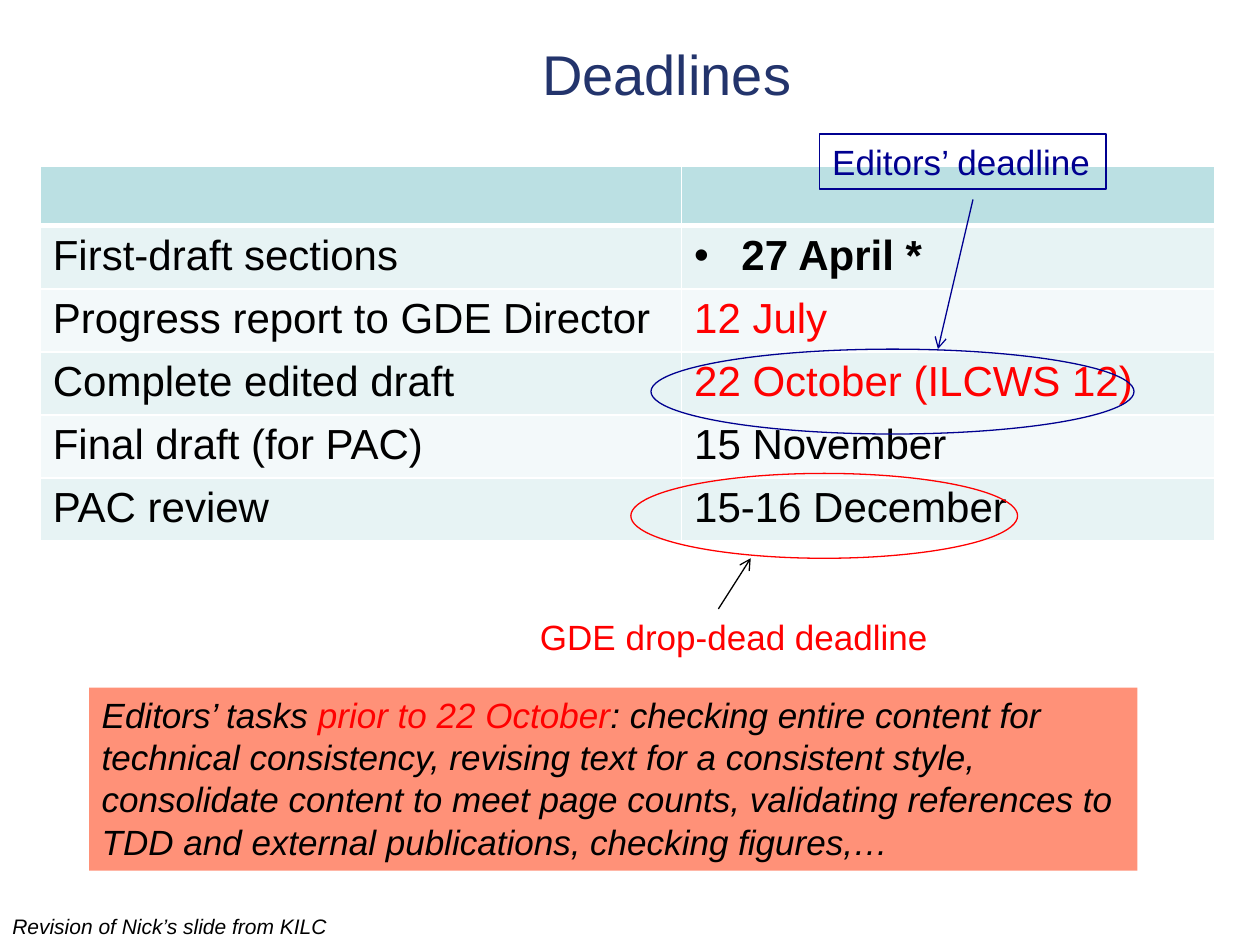
from lxml import etree
from pptx import Presentation
from pptx.dml.color import RGBColor
from pptx.enum import shapes as kinds, text as txt
from pptx.oxml.ns import qn
from pptx.util import Pt

FONT = "Arial"
BLACK = RGBColor(0x00, 0x00, 0x00)
WHITE = RGBColor(0xFF, 0xFF, 0xFF)
RED = RGBColor(0xFF, 0x00, 0x00)
NAVY = RGBColor(0x00, 0x00, 0x90)
TITLE_BLUE = RGBColor(0x23, 0x34, 0x6C)
SALMON = RGBColor(0xFF, 0x91, 0x78)
HEADER_TEAL = RGBColor(0xBB, 0xE0, 0xE3)
BANDS = (RGBColor(0xE7, 0xF3, 0xF4), RGBColor(0xF3, 0xF9, 0xFA))

COLUMN_WIDTHS = (366.5, 304.5)
ROW_HEIGHTS = (34, 34, 34, 34, 35.3, 34)
DEADLINES = (
    ("First-draft sections", "27 April *", dict(bold=True, bullet=True)),
    ("Progress report to GDE Director", "12 July", dict(color=RED)),
    ("Complete edited draft", "22 October (ILCWS 12)", dict(color=RED)),
    ("Final draft (for PAC)", "15 November", {}),
    ("PAC review", "15-16 December", {}),
)
TASKS = (
    ("Editors’ tasks ", BLACK),
    ("prior to 22 October", RED),
    (": checking entire content for technical consistency, revising text for "
     "a consistent style, consolidate content to meet page counts, validating "
     "references to TDD and external publications, checking figures,…", BLACK),
)


def points(*lengths):
    return [Pt(length) for length in lengths]


def write(frame, content, size=20, color=BLACK, bold=False, italic=False,
          align=txt.PP_ALIGN.LEFT, bullet=False):
    """Fill the first paragraph with a string or with (string, colour) runs."""
    paragraph = frame.paragraphs[0]
    paragraph.alignment = align
    if bullet:
        properties = paragraph._p.get_or_add_pPr()
        properties.set("marL", str(Pt(27)))
        properties.set("indent", str(-Pt(27)))
        etree.SubElement(properties, qn("a:buFont")).set("typeface", FONT)
        etree.SubElement(properties, qn("a:buChar")).set("char", "•")
    runs = [(content, color)] if isinstance(content, str) else content
    for words, run_color in runs:
        run = paragraph.add_run()
        run.text = words
        font = run.font
        font.name, font.size = FONT, Pt(size)
        font.bold, font.italic = bold, italic
        font.color.rgb = run_color


def add_label(slide, box, content, wrap=False, fill=None, outline=None,
              anchor=txt.MSO_ANCHOR.TOP, **style):
    label = slide.shapes.add_textbox(*points(*box))
    frame = label.text_frame
    frame.word_wrap = wrap
    frame.vertical_anchor = anchor
    if not wrap:
        frame.auto_size = txt.MSO_AUTO_SIZE.SHAPE_TO_FIT_TEXT
    if fill is not None:
        label.fill.solid()
        label.fill.fore_color.rgb = fill
    if outline is not None:
        label.line.color.rgb = outline
        label.line.width = Pt(0.75)
    write(frame, content, **style)


def style_cell(cell, fill, bottom_width=1):
    """Give the cell white borders, then its fill."""
    properties = cell._tc.get_or_add_tcPr()
    for side in "LRTB":
        width = bottom_width if side == "B" else 1
        border = etree.SubElement(properties, qn("a:ln" + side), w=str(Pt(width)))
        solid = etree.SubElement(border, qn("a:solidFill"))
        etree.SubElement(solid, qn("a:srgbClr"), val=str(WHITE))
    cell.fill.solid()
    cell.fill.fore_color.rgb = fill


def add_deadline_table(slide, left, top):
    table = slide.shapes.add_table(
        len(ROW_HEIGHTS), len(COLUMN_WIDTHS),
        *points(left, top, sum(COLUMN_WIDTHS), sum(ROW_HEIGHTS))).table
    table.horz_banding = False
    for column, width in zip(table.columns, COLUMN_WIDTHS):
        column.width = Pt(width)
    for row, height in zip(table.rows, ROW_HEIGHTS):
        row.height = Pt(height)
    for header in table.rows[0].cells:
        style_cell(header, HEADER_TEAL, bottom_width=3)
    for index, (milestone, date, date_style) in enumerate(DEADLINES):
        milestone_cell, date_cell = table.rows[index + 1].cells
        for cell in (milestone_cell, date_cell):
            style_cell(cell, BANDS[index % 2])
        write(milestone_cell.text_frame, milestone, size=24)
        write(date_cell.text_frame, date, size=24, **date_style)


def add_ring(slide, box, color):
    ring = slide.shapes.add_shape(kinds.MSO_SHAPE.OVAL, *points(*box))
    ring.shadow.inherit = False
    ring.fill.background()
    ring.line.color.rgb = color
    ring.line.width = Pt(0.75)


def add_arrow(slide, start, end, color):
    arrow = slide.shapes.add_connector(
        kinds.MSO_CONNECTOR.STRAIGHT, *points(*start, *end))
    arrow.line.color.rgb = color
    arrow.line.width = Pt(0.75)
    etree.SubElement(arrow.line._get_or_add_ln(), qn("a:tailEnd"), type="arrow")
    etree.SubElement(arrow._element.spPr, qn("a:effectLst"))


def add_callout(slide, ring_box, label_box, label, start, end, color,
                arrow_color, outline=None):
    """Ring a date and point to it from its label; start and end are
    offsets from the top left of the ring."""
    left, top = ring_box[:2]
    add_ring(slide, ring_box, color)
    add_label(slide, label_box, label, color=color, outline=outline)
    add_arrow(slide, (left + start[0], top + start[1]),
              (left + end[0], top + end[1]), arrow_color)


def build_deadlines_slide(slide):
    add_label(slide, (102, 6, 558, 72), "Deadlines", wrap=True, size=32,
              color=TITLE_BLUE, align=txt.PP_ALIGN.CENTER,
              anchor=txt.MSO_ANCHOR.MIDDLE)
    add_deadline_table(slide, 23, 95)
    add_callout(slide, (360.5, 270.5, 221, 48.5), (301.5, 348, 238.5, 31.5),
                "GDE drop-dead deadline", (50, 77.5), (68.5, 48.5),
                RED, BLACK)
    add_label(slide, (0, 518.5, 199.5, 21.5),
              "Revision of Nick’s slide from KILC", size=12, italic=True)
    add_label(slide, (51, 393, 599, 104.5), TASKS, wrap=True, fill=SALMON,
              italic=True)
    add_callout(slide, (372, 199.5, 276, 48.5), (468.5, 76.5, 163.5, 31.5),
                "Editors’ deadline", (184, -85.5), (164, 0),
                NAVY, NAVY, outline=NAVY)


def main():
    deck = Presentation()
    deck.slide_width, deck.slide_height = points(720, 540)
    build_deadlines_slide(deck.slides.add_slide(deck.slide_layouts[6]))
    deck.save("out.pptx")


if __name__ == "__main__":
    main()
